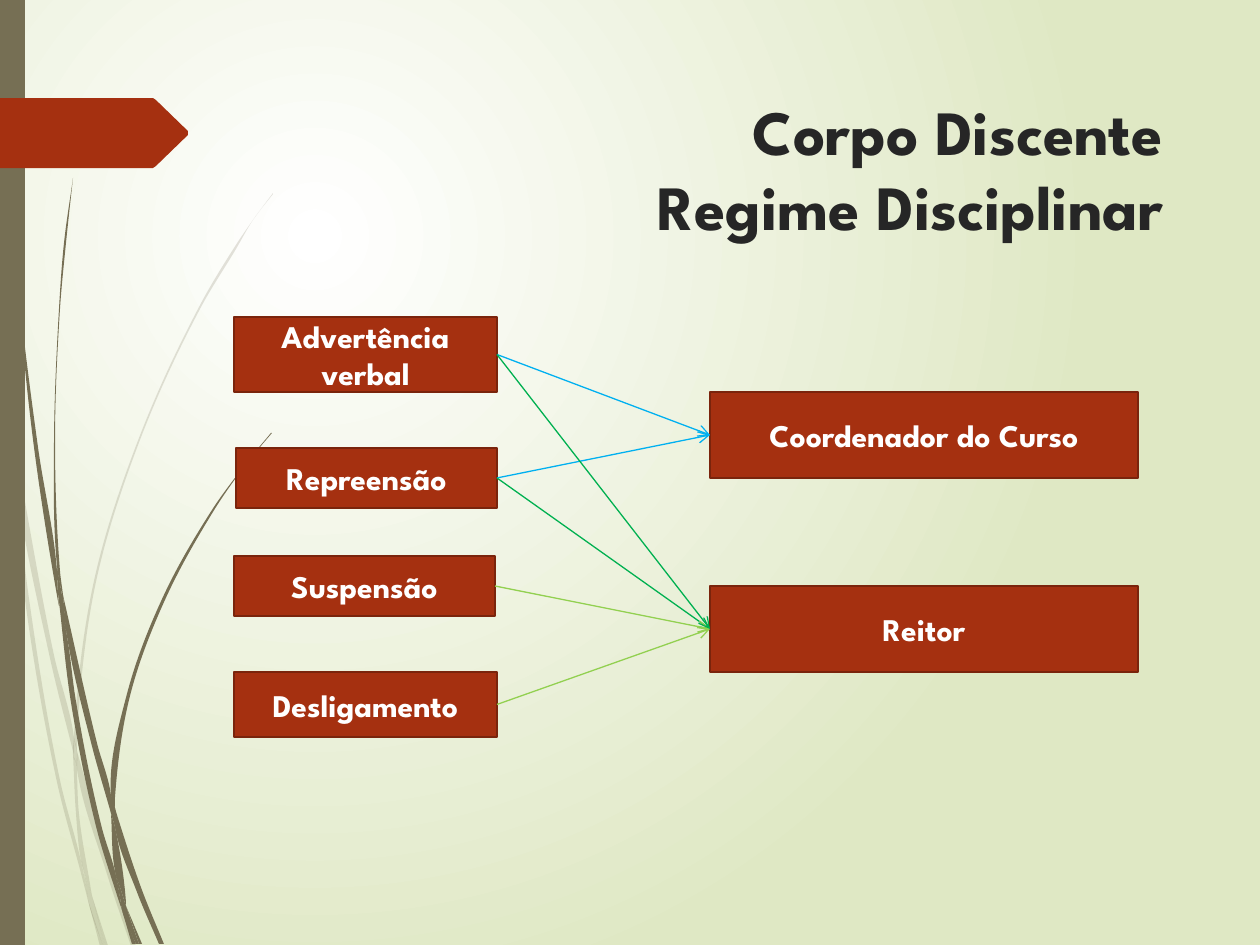
from math import dist, hypot

from lxml import etree
from pptx import Presentation
from pptx.dml.color import RGBColor
from pptx.enum import shapes, text
from pptx.oxml.ns import qn
from pptx.util import Pt

PX = 914400 / 126
FONT = "League Spartan"
WHITE = RGBColor(0xFF, 0xFF, 0xFF)
PALE_GREEN = RGBColor(0xDF, 0xE8, 0xC4)
OLIVE = RGBColor(0x76, 0x6F, 0x54)
RUST = RGBColor(0xA5, 0x30, 0x10)
DARK_RUST = RGBColor(0x7A, 0x24, 0x0C)
INK = RGBColor(0x26, 0x26, 0x26)
BLUE = RGBColor(0x00, 0xB0, 0xF0)
GREEN = RGBColor(0x00, 0xB0, 0x50)
LIME = RGBColor(0x92, 0xD0, 0x50)

TITLE = ["Corpo Discente", "Regime Disciplinar"]

# Label: left, top, width, height in px
BOXES = {
    "Advertência verbal": (234, 317, 263, 75),
    "Repreensão": (236, 448, 261, 60),
    "Suspensão": (234, 556, 261, 60),
    "Desligamento": (234, 672, 263, 65),
    "Coordenador do Curso": (710, 392, 428, 86),
    "Reitor": (710, 586, 428, 86),
}

# Penalty, who applies it, arrow colour
ARROWS = [
    ("Advertência verbal", "Coordenador do Curso", BLUE),
    ("Repreensão", "Coordenador do Curso", BLUE),
    ("Repreensão", "Reitor", GREEN),
    ("Suspensão", "Reitor", LIME),
    ("Desligamento", "Reitor", LIME),
    ("Advertência verbal", "Reitor", GREEN),
]

# Grass blades: knots of each closed outline in px
PALE_BLADES = [
    [(10, 441), (8, 406), (0, 355), (0, 377), (9, 433)],
    [(50, 658), (74, 755), (74, 738), (54, 655), (13, 435), (15, 474)],
    [(81, 765), (77, 751), (77, 769), (107, 874), (131, 946), (136, 946), (111, 872)],
    [(105, 946), (108, 946), (92, 896)],
    [(81, 861), (60, 780), (28, 591), (15, 474), (10, 441), (24, 592), (57, 782),
     (81, 873), (88, 900), (87, 891)],
    [(73, 755), (76, 814), (81, 861), (84, 872), (92, 896), (91, 890), (79, 814),
     (77, 769), (77, 766)],
    [(77, 736), (96, 582), (140, 440), (200, 309), (236, 249), (253, 220), (273, 194),
     (273, 193), (253, 220), (234, 248), (199, 307), (139, 438), (94, 581), (74, 736),
     (74, 738), (77, 751)],
    [(88, 900), (100, 946), (103, 946)],
    [(77, 766), (77, 769), (77, 751), (74, 738), (73, 755)],
    [(84, 872), (82, 861), (87, 891), (88, 900), (103, 946), (105, 946), (92, 896)],
]
DARK_BLADES = [
    [(6, 139), (18, 294), (34, 447), (58, 601), (59, 606), (57, 576), (57, 571),
     (38, 447), (19, 292), (8, 137), (5, 60), (4, 0), (3, 0), (4, 60)],
    [(92, 746), (111, 813), (111, 798), (111, 795), (97, 743), (63, 595), (67, 636)],
    [(118, 818), (115, 808), (115, 827), (137, 892), (159, 944), (164, 944), (142, 890)],
    [(115, 871), (102, 828), (76, 701), (67, 636), (59, 601), (71, 702), (97, 830),
     (116, 892), (122, 910), (121, 903)],
    [(63, 595), (60, 571), (55, 440), (60, 309), (66, 243), (73, 178), (64, 243),
     (59, 309), (54, 440), (57, 566), (62, 595)],
    [(139, 944), (142, 944), (126, 906)],
    [(59, 601), (67, 636), (63, 595), (62, 595), (57, 566), (57, 571)],
    [(115, 798), (130, 696), (165, 600), (213, 512), (241, 471), (256, 452), (272, 433),
     (271, 433), (256, 451), (241, 470), (212, 510), (163, 597), (127, 694), (111, 795),
     (115, 808)],
    [(122, 910), (132, 944), (136, 944)],
    [(111, 813), (115, 871), (121, 890), (126, 906), (126, 902), (115, 827), (113, 820)],
    [(111, 813), (113, 820), (115, 827), (115, 808), (111, 795), (111, 798)],
    [(121, 890), (115, 871), (121, 903), (122, 910), (136, 944), (139, 944), (126, 906)],
]
BANNER = [(188, 135), (156, 166), (153, 168), (0, 168), (0, 98), (153, 98), (156, 100),
          (188, 131)]


def emu(*lengths):
    return [round(length * PX) for length in lengths]


def direction(start, end):
    dx, dy = end[0] - start[0], end[1] - start[1]
    length = hypot(dx, dy) or 1
    return dx / length, dy / length


def handles(knots, i):
    """Directions into and out of a knot: one shared where the outline runs on."""
    before, here, after = knots[i - 1], knots[i], knots[(i + 1) % len(knots)]
    into, out = direction(before, here), direction(here, after)
    if into[0] * out[0] + into[1] * out[1] > 0.8:
        into = out = direction((0, 0), (into[0] + out[0], into[1] + out[1]))
    return into, out


def paint(shape, fill, line=None):
    shape.shadow.inherit = False
    shape.fill.solid()
    shape.fill.fore_color.rgb = fill
    if line is None:
        shape.line.fill.background()
    else:
        shape.line.color.rgb = line
        shape.line.width = Pt(1.25)


def add_outline(parent, knots, color):
    points = [emu(*knot) for knot in knots]
    builder = parent.shapes.build_freeform(*points[0])
    builder.add_line_segments(points[1:] + points[:1], close=True)
    shape = builder.convert_to_shape()
    paint(shape, color)
    return shape


def add_blade(group, knots, opacity):
    blade = add_outline(group, knots, OLIVE)
    if opacity < 100:
        color = blade.fill._xPr.find(qn("a:solidFill"))[0]
        etree.SubElement(color, qn("a:alpha"), val=str(opacity * 1000))
    # Bend each straight segment into a curve
    left, top = min(x for x, _ in knots), min(y for _, y in knots)
    for i, segment in enumerate(list(blade._element.iter(qn("a:lnTo")))):
        j = (i + 1) % len(knots)
        start, end = knots[i], knots[j]
        out, into = handles(knots, i)[1], handles(knots, j)[0]
        reach = dist(start, end) / 3
        controls = [(start[0] + reach * out[0], start[1] + reach * out[1]),
                    (end[0] - reach * into[0], end[1] - reach * into[1]), end]
        segment.tag = qn("a:cubicBezTo")
        segment.remove(segment[0])
        for x, y in controls:
            x, y = emu(x - left, y - top)
            etree.SubElement(segment, qn("a:pt"), x=str(x), y=str(y))


def add_run(paragraph, words, size, color):
    run = paragraph.add_run()
    run.text = words
    run.font.name, run.font.size, run.font.bold = FONT, Pt(size), True
    run.font.color.rgb = color


def add_box(slide, label, place):
    box = slide.shapes.add_shape(shapes.MSO_SHAPE.RECTANGLE, *emu(*place))
    paint(box, RUST, DARK_RUST)
    box.text_frame.word_wrap = True
    box.text_frame.vertical_anchor = text.MSO_ANCHOR.MIDDLE
    paragraph = box.text_frame.paragraphs[0]
    paragraph.alignment = text.PP_ALIGN.CENTER
    add_run(paragraph, label, 18, WHITE)
    return box


def add_arrow(slide, start, end, color):
    arrow = slide.shapes.add_connector(shapes.MSO_CONNECTOR.STRAIGHT, 0, 0, 0, 0)
    arrow.begin_connect(start, 3)
    arrow.end_connect(end, 1)
    arrow.line.color.rgb = color
    arrow.line.width = Pt(0.75)
    etree.SubElement(arrow.line._get_or_add_ln(), qn("a:tailEnd"), type="arrow")
    etree.SubElement(arrow._element.spPr, qn("a:effectLst"))


def set_background(slide):
    fill = slide.background.fill
    fill.gradient()
    for stop, color in zip(fill.gradient_stops, (WHITE, PALE_GREEN)):
        stop.color.rgb = color
    gradient = next(slide._element.iter(qn("a:gradFill")))
    gradient.remove(gradient.find(qn("a:lin")))
    circle = etree.SubElement(gradient, qn("a:path"), path="circle")
    etree.SubElement(circle, qn("a:fillToRect"),
                     l="50000", t="50000", r="100000", b="100000")


def add_title(slide):
    title = slide.shapes.title
    slide.shapes._spTree.append(title._element)  # in front of the decoration
    title.left, title.top, title.width, title.height = emu(268, 86, 908, 176)
    title.text_frame.auto_size = text.MSO_AUTO_SIZE.NONE
    title.text_frame.vertical_anchor = text.MSO_ANCHOR.TOP
    paragraph = title.text_frame.paragraphs[0]
    paragraph.alignment = text.PP_ALIGN.RIGHT
    for i, line in enumerate(TITLE):
        if i:
            paragraph.add_line_break()
        add_run(paragraph, line, 36, INK)


def main():
    presentation = Presentation()
    presentation.slide_width, presentation.slide_height = emu(1260, 945)
    slide = presentation.slides.add_slide(presentation.slide_layouts[5])
    set_background(slide)

    # Grass, side bar and banner
    for blades, opacity in ((PALE_BLADES, 20), (DARK_BLADES, 100)):
        group = slide.shapes.add_group_shape()
        for knots in blades:
            add_blade(group, knots, opacity)
    bar = slide.shapes.add_shape(shapes.MSO_SHAPE.RECTANGLE, *emu(0, 0, 25, 945))
    paint(bar, OLIVE)
    add_outline(slide, BANNER, RUST)

    add_title(slide)

    # Penalties, authorities and the arrows between them
    boxes = {label: add_box(slide, label, place) for label, place in BOXES.items()}
    for penalty, authority, color in ARROWS:
        add_arrow(slide, boxes[penalty], boxes[authority], color)

    presentation.save("out.pptx")


if __name__ == "__main__":
    main()
